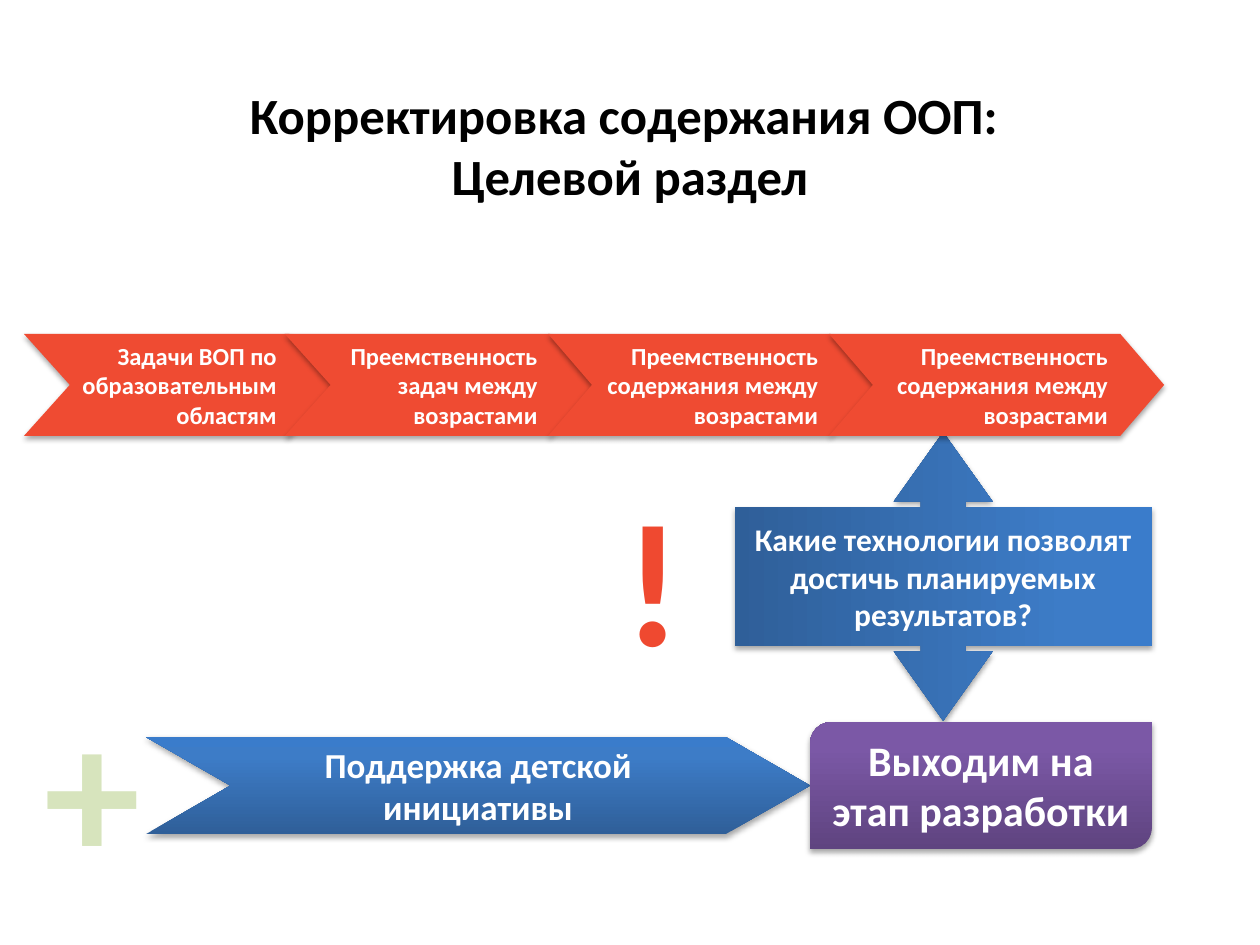
from dataclasses import dataclass
from lxml import etree
from pptx import Presentation
from pptx.dml.color import RGBColor
from pptx.enum.shapes import MSO_SHAPE
from pptx.enum.text import MSO_ANCHOR, MSO_AUTO_SIZE, PP_ALIGN
from pptx.oxml import parse_xml
from pptx.oxml.ns import nsdecls, qn
from pptx.util import Inches, Pt

CHEVRON = MSO_SHAPE.CHEVRON
CALLOUT = MSO_SHAPE.LEFT_RIGHT_ARROW_CALLOUT
ROUNDED = MSO_SHAPE.ROUND_2_DIAG_RECTANGLE
CENTER, RIGHT = PP_ALIGN.CENTER, PP_ALIGN.RIGHT
TOP, MIDDLE = MSO_ANCHOR.TOP, MSO_ANCHOR.MIDDLE
GROW, FIXED = MSO_AUTO_SIZE.SHAPE_TO_FIT_TEXT, MSO_AUTO_SIZE.NONE


@dataclass(frozen=True)
class Theme:
    font: str = "Calibri"
    ink: str = "000000"
    white: str = "FFFFFF"
    red: str = "EF4B32"
    mark_red: str = "EF4930"
    pale_green: str = "D7E4BD"
    blue: tuple = ((0, "2F5F99"), (80, "3D7CC7"), (100, "3A7CCB"))
    purple: tuple = ((0, "5F4480"), (80, "7B58A6"), (100, "7C57A8"))
    title: int = 29
    step: int = 14
    question: int = 18
    support: int = 20
    outcome: int = 24
    exclamation: int = 100
    plus: int = 110


THEME = Theme()


def write_text(shape, text, *, size, color=THEME.white, align=CENTER,
               anchor=MIDDLE, wrap=True, fit=GROW):
    frame = shape.text_frame
    frame.word_wrap = wrap
    frame.auto_size = fit
    frame.vertical_anchor = anchor
    for index, line in enumerate(text.split("\n")):
        para = frame.paragraphs[0] if index == 0 else frame.add_paragraph()
        para.alignment = align
        span = para.add_run()
        span.text = line
        span.font.name = THEME.font
        span.font.size = Pt(size)
        span.font.bold = True
        span.font.color.rgb = RGBColor.from_string(color)


def add_label(page, box, text, **text_format):
    label = page.shapes.add_textbox(*map(Inches, box))
    write_text(label, text, **text_format)


def fill_gradient(shape, stops):
    shape.fill.gradient()
    gradient = shape._element.spPr.find(qn("a:gradFill"))
    stop_xml = "".join(
        f'<a:gs pos="{position * 1000}"><a:srgbClr val="{color}"/></a:gs>'
        for position, color in stops)
    gradient.getparent().replace(gradient, parse_xml(
        f'<a:gradFill {nsdecls("a")} rotWithShape="1"><a:gsLst>{stop_xml}</a:gsLst>'
        '<a:lin ang="16200000" scaled="0"/></a:gradFill>'))


def add_shadow(shape):
    shape.shadow.inherit = False
    effects = shape._element.spPr.find(qn("a:effectLst"))
    shadow = etree.SubElement(effects, qn("a:outerShdw"), blurRad=str(Pt(3.1)),
                              dist=str(Pt(1.8)), dir="5400000", rotWithShape="0")
    color = etree.SubElement(shadow, qn("a:srgbClr"), val=THEME.ink)
    etree.SubElement(color, qn("a:alpha"), val="35000")


def add_block(page, kind, box, fill, text, *, adjustments=(), **text_format):
    block = page.shapes.add_shape(kind, *map(Inches, box))
    for index, value in enumerate(adjustments):
        block.adjustments[index] = value
    if isinstance(fill, str):
        block.fill.solid()
        block.fill.fore_color.rgb = RGBColor.from_string(fill)
    else:
        fill_gradient(block, fill)
    block.line.fill.background()
    add_shadow(block)
    write_text(block, text, **text_format)
    return block


def add_title(page, box):
    add_label(page, box, "Корректировка содержания ООП: \nЦелевой раздел",
              size=THEME.title, color=THEME.ink, fit=FIXED)


def add_question(page, box):
    left, top, width, height = box
    turned = (left + (width - height) / 2, top + (height - width) / 2, height, width)
    callout = add_block(
        page, CALLOUT, turned, THEME.blue,
        "Какие технологии позволят достичь планируемых результатов?",
        adjustments=(0.154, 0.171, 0.24, 0.481), size=THEME.question)
    callout.rotation = 90
    callout.text_frame._txBody.bodyPr.set("vert", "vert270")


def add_steps(page, box):
    left, top, width, height = box
    content = "Преемственность содержания между возрастами"
    steps = (
        (0, 2.47, 0.45, "Задачи ВОП по образовательным областям"),
        (2.07, 2.47, 0.45, "Преемственность задач между возрастами"),
        (4.16, 2.59, 0.43, content),
        (6.39, width - 6.39, 0.43, content),
    )
    for offset, step_width, notch, text in steps:
        add_block(page, CHEVRON, (left + offset, top, step_width, height), THEME.red,
                  text, adjustments=(notch,), size=THEME.step, align=RIGHT)


def add_outcome(page, box):
    left, top, width, height = box
    support_width = 5.27
    add_block(page, CHEVRON, (left, top + 0.12, support_width, 0.77), THEME.blue,
              "Поддержка детской инициативы", adjustments=(0.87,), size=THEME.support)
    add_block(page, ROUNDED, (left + support_width, top, width - support_width, height),
              THEME.purple, "Выходим на этап разработки",
              size=THEME.outcome, anchor=TOP)


def add_mark(page, box, sign, size, color, wrap):
    add_label(page, box, sign, size=size, color=color, anchor=TOP, wrap=wrap)


def main():
    deck = Presentation()
    deck.slide_width, deck.slide_height = Inches(10), Inches(7.5)
    page = deck.slides.add_slide(deck.slide_layouts[6])
    add_title(page, (0.5, 0.56, 9, 1.18))
    add_question(page, (5.83, 3.43, 3.31, 2.29))
    add_steps(page, (0.19, 2.65, 9.05, 0.81))
    add_outcome(page, (1.16, 5.73, 7.98, 1.01))
    add_mark(page, (4.35, 3.69, 1.66, 1.78), "!", THEME.exclamation, THEME.mark_red, True)
    add_mark(page, (0.25, 5.26, 0.97, 1.95), "+", THEME.plus, THEME.pale_green, False)
    deck.save("out.pptx")


if __name__ == "__main__":
    main()
